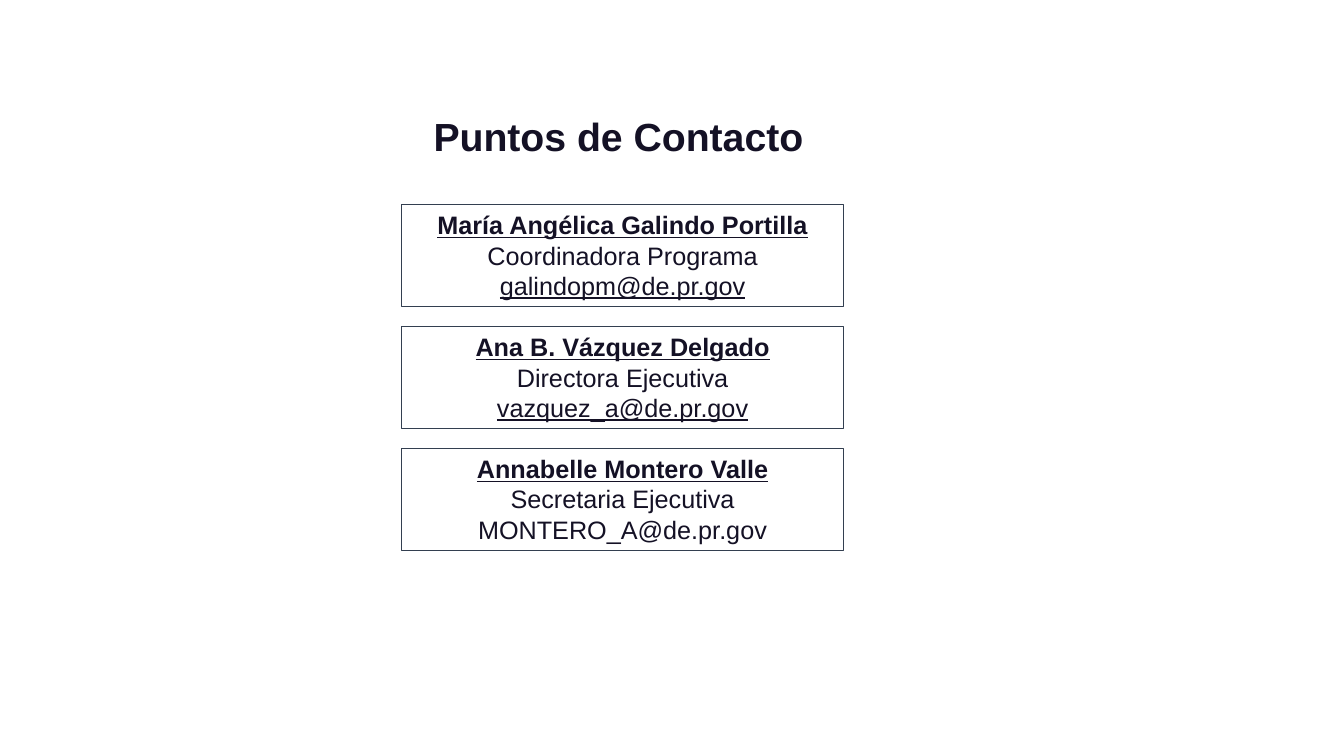
import pptx
import pptx.util
import pptx.dml.color
import pptx.enum.shapes
import pptx.enum.text

INK = pptx.dml.color.RGBColor(0x14, 0x11, 0x25)
BORDER = pptx.dml.color.RGBColor(0x33, 0x3F, 0x50)
FONT = "Arial"

SLIDE_SIZE = (13.33, 7.5)
HEADING_BOX = (4.2, 1.06, 3.92, 0.57)
CARD_COLUMN = (3.98, 2.03, 4.39, 3.43)
CARD_GAP = 0.2

HEADING = "Puntos de Contacto"
# Each line of a card: text, bold, underlined
CONTACTS = [
    [("María Angélica Galindo Portilla", True, True),
     ("Coordinadora Programa", False, False),
     ("galindopm@de.pr.gov", False, True)],
    [("Ana B. Vázquez Delgado", True, True),
     ("Directora Ejecutiva", False, False),
     ("vazquez_a@de.pr.gov", False, True)],
    [("Annabelle Montero Valle", True, True),
     ("Secretaria Ejecutiva", False, False),
     ("MONTERO_A@de.pr.gov", False, False)],
]


def set_all(target, values):
    for name, value in values.items():
        setattr(target, name, value)


def style_run(run, size, bold, underline):
    set_all(run.font, {"name": FONT, "size": pptx.util.Pt(size),
                       "bold": bold, "underline": underline})
    run.font.color.rgb = INK


def inches(box):
    return [pptx.util.Inches(length) for length in box]


def format_frame(frame, wrap):
    set_all(frame, {
        "word_wrap": wrap,
        "auto_size": pptx.enum.text.MSO_AUTO_SIZE.SHAPE_TO_FIT_TEXT,
        "vertical_anchor": pptx.enum.text.MSO_ANCHOR.TOP,
    })


def add_heading(slide, box):
    heading = slide.shapes.title
    set_all(heading, dict(zip(("left", "top", "width", "height"), inches(box))))
    format_frame(heading.text_frame, False)
    line = heading.text_frame.paragraphs[0]
    line.alignment = pptx.enum.text.PP_ALIGN.LEFT
    run = line.add_run()
    run.text = HEADING
    style_run(run, 28, True, False)


def add_card(slide, box, lines):
    card = slide.shapes.add_shape(
        pptx.enum.shapes.MSO_SHAPE.RECTANGLE, *inches(box))
    card.shadow.inherit = False
    card.fill.background()
    card.line.color.rgb = BORDER
    card.line.width = pptx.util.Pt(0.75)
    frame = card.text_frame
    format_frame(frame, True)
    for index, (text, bold, underline) in enumerate(lines):
        line = frame.add_paragraph() if index else frame.paragraphs[0]
        line.alignment = pptx.enum.text.PP_ALIGN.CENTER
        run = line.add_run()
        run.text = text
        style_run(run, 18, bold, underline)


def add_contacts(slide, box):
    left, top, width, height = box
    # Equal cards share the column, separated by a fixed gap
    pitch = (height + CARD_GAP) / len(CONTACTS)
    for row, lines in enumerate(CONTACTS):
        add_card(slide, (left, top + row * pitch, width, pitch - CARD_GAP), lines)


def main():
    deck = pptx.Presentation()
    deck.slide_width, deck.slide_height = inches(SLIDE_SIZE)
    slide = deck.slides.add_slide(deck.slide_layouts.get_by_name("Title Only"))
    add_heading(slide, HEADING_BOX)
    add_contacts(slide, CARD_COLUMN)
    deck.save("out.pptx")


if __name__ == "__main__":
    main()
